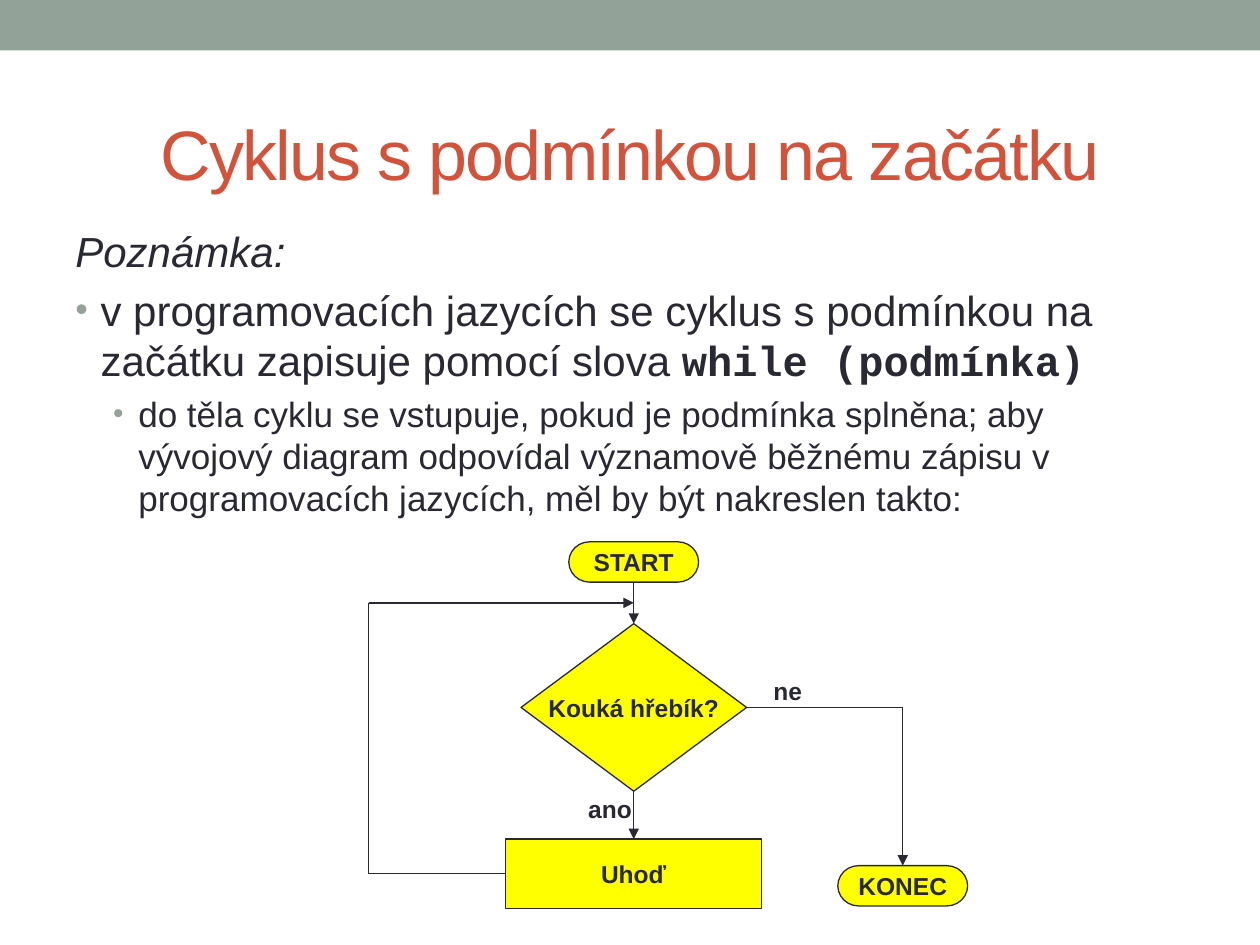
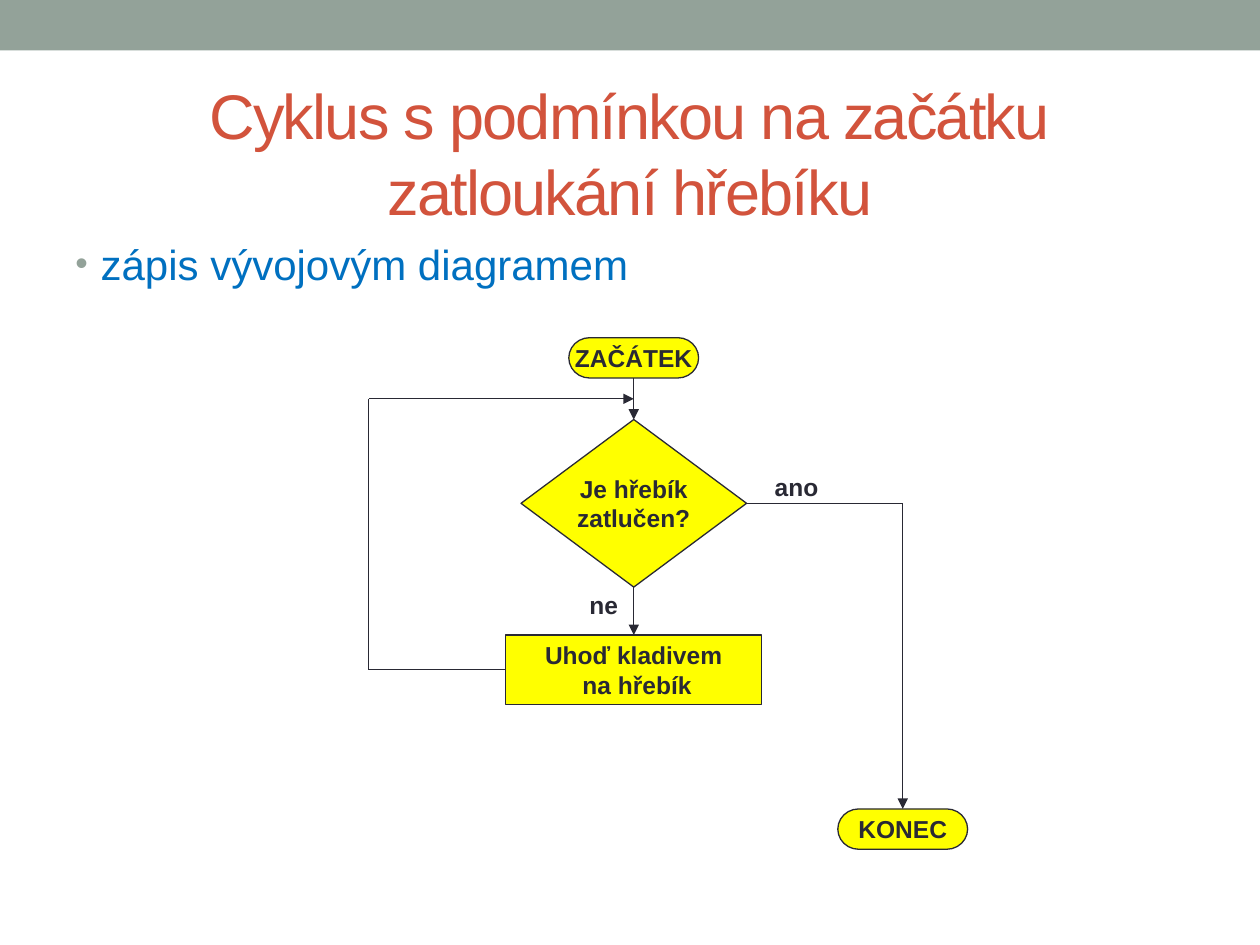
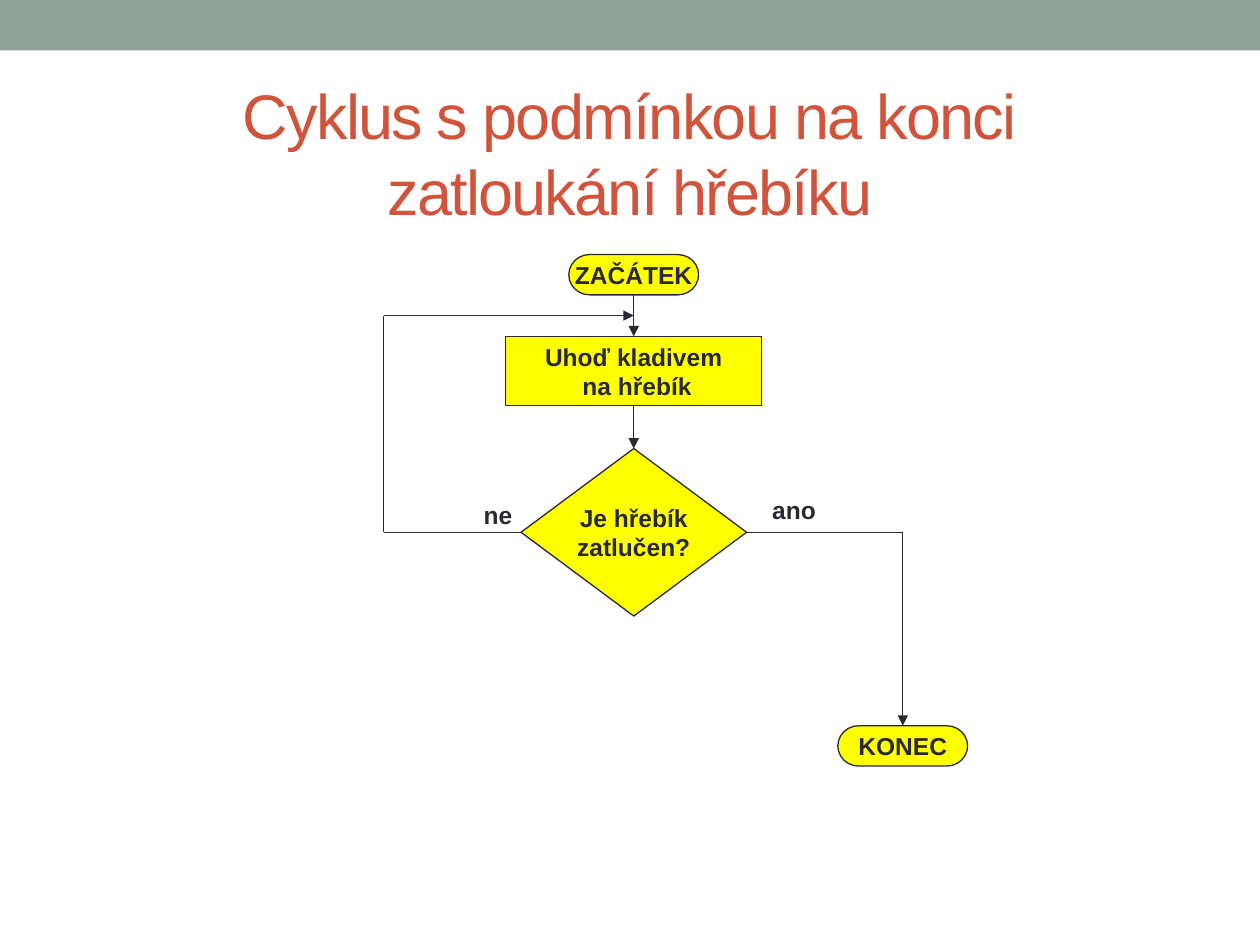
from dataclasses import dataclass

import pptx
import pptx.dml.color
import pptx.enum.shapes
import pptx.enum.text
import pptx.oxml
import pptx.oxml.ns
import pptx.util
from pptx.util import Inches

COLORS = {
    "band": "93A299",
    "title": "D2533C",
    "text": "292934",
    "highlight": "0070C0",
    "node": "FFFF00",
}
FONT = "Arial"
CODE_FONT = "Courier New"
NODE_TEXT_SIZE = 14

AXIS_X = 5.03
END_X = 7.165
FIRST_GAP = 0.33
LOOP_OFFSET = 1.09

SHAPES = pptx.enum.shapes.MSO_SHAPE
TOP, LEFT, BOTTOM, RIGHT = range(4)


@dataclass(frozen=True)
class NodeKind:
    preset: pptx.enum.shapes.MSO_SHAPE
    width: float
    height: float


DECISION = NodeKind(SHAPES.FLOWCHART_DECISION, 1.79, 1.33)
PROCESS = NodeKind(SHAPES.FLOWCHART_PROCESS, 2.03, 0.55)
TERMINATOR = NodeKind(SHAPES.FLOWCHART_TERMINATOR, 1.03, 0.32)


@dataclass(frozen=True)
class Step:
    kind: NodeKind
    text: str
    gap: float = FIRST_GAP


@dataclass(frozen=True)
class Answer:
    text: str
    left: float
    top: float
    width: float


@dataclass(frozen=True)
class Flow:
    start_text: str
    start_top: float
    end_top: float
    steps: tuple[Step, ...]
    answers: tuple[Answer, ...]


@dataclass(frozen=True)
class BodyParagraph:
    text: str
    size: int = 24
    color: str = "text"
    code: str = ""
    italic: bool = False
    bullet: bool = True
    level: int = 0


@dataclass(frozen=True)
class SlideContent:
    title: str
    title_size: int
    flow: Flow
    body_top: float = 0
    body: tuple[BodyParagraph, ...] = ()


HAMMER_TEXT = "Uhoď kladivem\n na hřebík"
QUESTION_TEXT = "Je hřebík\nzatlučen?"

SLIDES = (
    SlideContent(
        "Cyklus s podmínkou na začátku", 40,
        Flow("START", 4.3, 6.87,
             (Step(DECISION, "Kouká hřebík?"), Step(PROCESS, "Uhoď", 0.38)),
             (Answer("ano", 4.57, 6.25, 0.55), Answer("ne", 6.04, 5.32, 0.43))),
        1.74,
        (BodyParagraph("Poznámka:", italic=True, bullet=False),
         BodyParagraph("v programovacích jazycích se cyklus s podmínkou na "
                       "začátku zapisuje pomocí slova ", code="while (podmínka)"),
         BodyParagraph("do těla cyklu se vstupuje, pokud je podmínka splněna; aby "
                       "vývojový diagram odpovídal významově běžnému zápisu v "
                       "programovacích jazycích, měl by být nakreslen takto:",
                       size=20, level=1)),
    ),
    SlideContent(
        "Cyklus s podmínkou na začátku\vzatloukání hřebíku", 36,
        Flow("ZAČÁTEK", 2.68, 6.42,
             (Step(DECISION, QUESTION_TEXT), Step(PROCESS, HAMMER_TEXT, 0.38)),
             (Answer("ne", 4.58, 4.63, 0.43), Answer("ano", 6.05, 3.7, 0.55))),
        1.84,
        (BodyParagraph("zápis vývojovým diagramem", color="highlight"),),
    ),
    SlideContent(
        "Cyklus s podmínkou na konci\vzatloukání hřebíku", 36,
        Flow("ZAČÁTEK", 2.02, 5.76,
             (Step(PROCESS, HAMMER_TEXT), Step(DECISION, QUESTION_TEXT, 0.34)),
             (Answer("ne", 3.74, 3.92, 0.43), Answer("ano", 6.03, 3.88, 0.55))),
    ),
)


def rgb(name: str) -> pptx.dml.color.RGBColor:
    return pptx.dml.color.RGBColor.from_string(COLORS[name])


def append_xml(parent, tag: str, attributes: str = "") -> None:
    namespace = pptx.oxml.ns.nsdecls("a")
    parent.append(pptx.oxml.parse_xml(f"<a:{tag} {namespace} {attributes}/>"))


def format_font(font, size: int, color: str, bold: bool = False,
                italic: bool = False, name: str = FONT) -> None:
    font.name = name
    font.size = pptx.util.Pt(size)
    font.bold = bold
    font.italic = italic
    font.color.rgb = rgb(color)


def format_node_text(text_frame) -> None:
    text_frame.word_wrap = False
    for paragraph in text_frame.paragraphs:
        for run in paragraph.runs:
            format_font(run.font, NODE_TEXT_SIZE, "text", bold=True)


def add_band(slide) -> None:
    band = slide.shapes.add_shape(SHAPES.RECTANGLE, 0, 0, Inches(10), Inches(0.4))
    band.shadow.inherit = False
    band.fill.solid()
    band.fill.fore_color.rgb = rgb("band")
    band.line.fill.background()


def add_title(slide, text: str, size: int) -> None:
    title = slide.shapes.add_textbox(Inches(0.5), Inches(0.58), Inches(9), Inches(1.26))
    title.text_frame.word_wrap = True
    title.text_frame.vertical_anchor = pptx.enum.text.MSO_ANCHOR.MIDDLE
    title.text_frame.text = text
    paragraph = title.text_frame.paragraphs[0]
    paragraph.alignment = pptx.enum.text.PP_ALIGN.CENTER
    for run in paragraph.runs:
        format_font(run.font, size, "title")
        run._r.get_or_add_rPr().set("spc", "-100")


def add_bullet(paragraph, level: int) -> None:
    properties = paragraph._p.get_or_add_pPr()
    properties.set("marL", str(Inches(0.2 + 0.3 * level)))
    properties.set("indent", str(Inches(-0.2)))
    append_xml(properties, "buClr")
    append_xml(properties[-1], "srgbClr", f'val="{COLORS["band"]}"')
    append_xml(properties, "buSzPct", 'val="85000"')
    append_xml(properties, "buFont", f'typeface="{FONT}"')
    append_xml(properties, "buChar", 'char="•"')


def add_body(slide, top: float, body: tuple[BodyParagraph, ...]) -> None:
    box = slide.shapes.add_textbox(Inches(0.5), Inches(top), Inches(9), Inches(7.08 - top))
    text_frame = box.text_frame
    text_frame.word_wrap = True
    text_frame.text = "\n".join(item.text for item in body)
    for paragraph, item in zip(text_frame.paragraphs, body):
        paragraph.level = item.level
        paragraph.space_before = pptx.util.Pt(0.2 * item.size)
        format_font(paragraph.runs[0].font, item.size, item.color, italic=item.italic)
        if item.code:
            code_run = paragraph.add_run()
            code_run.text = item.code
            format_font(code_run.font, item.size, item.color, bold=True, name=CODE_FONT)
        if item.bullet:
            add_bullet(paragraph, item.level)


def add_node(slide, kind: NodeKind, text: str, center_x: float, top: float):
    node = slide.shapes.add_shape(kind.preset, Inches(center_x - kind.width / 2),
                                  Inches(top), Inches(kind.width), Inches(kind.height))
    node.shadow.inherit = False
    node.fill.solid()
    node.fill.fore_color.rgb = rgb("node")
    node.line.color.rgb = rgb("text")
    node.line.width = pptx.util.Pt(0.75)
    node.text_frame.text = text
    node.text_frame.vertical_anchor = pptx.enum.text.MSO_ANCHOR.MIDDLE
    for paragraph in node.text_frame.paragraphs:
        paragraph.alignment = pptx.enum.text.PP_ALIGN.CENTER
    format_node_text(node.text_frame)
    return node


def add_answer(slide, answer: Answer) -> None:
    label = slide.shapes.add_textbox(Inches(answer.left), Inches(answer.top),
                                     Inches(answer.width), Inches(0.34))
    label.text_frame.text = answer.text
    label.text_frame.auto_size = pptx.enum.text.MSO_AUTO_SIZE.SHAPE_TO_FIT_TEXT
    format_node_text(label.text_frame)


def add_line(slide, start: tuple[int, int], end: tuple[int, int], arrow: bool = False):
    line = slide.shapes.add_connector(pptx.enum.shapes.MSO_CONNECTOR.STRAIGHT, *start, *end)
    line.line.color.rgb = rgb("text")
    line.line.width = pptx.util.Pt(0.75)
    if arrow:
        append_xml(line.line._get_or_add_ln(), "tailEnd", 'type="triangle"')
    append_xml(line._element.spPr, "effectLst")
    return line


def middle_y(shape) -> int:
    return shape.top + shape.height // 2


def add_flow(slide, flow: Flow) -> None:
    """Draw the chain of steps, the way out of the decision and the loop back."""
    start = add_node(slide, TERMINATOR, flow.start_text, AXIS_X, flow.start_top)
    end = add_node(slide, TERMINATOR, "KONEC", END_X, flow.end_top)
    axis_x, end_x = Inches(AXIS_X), Inches(END_X)

    chain = [start]
    bottom = flow.start_top + TERMINATOR.height
    for step in flow.steps:
        top = bottom + step.gap
        node = add_node(slide, step.kind, step.text, AXIS_X, top)
        previous = chain[-1]
        arrow = add_line(slide, (axis_x, previous.top + previous.height),
                         (axis_x, node.top), arrow=True)
        arrow.begin_connect(previous, BOTTOM)
        arrow.end_connect(node, TOP)
        chain.append(node)
        bottom = top + step.kind.height
        if step.kind is DECISION:
            exit_corner = (end_x, middle_y(node))
            exit_line = add_line(slide, (node.left + node.width, middle_y(node)), exit_corner)
            exit_line.begin_connect(node, RIGHT)
            exit_arrow = add_line(slide, exit_corner, (end_x, end.top), arrow=True)
            exit_arrow.end_connect(end, TOP)

    last = chain[-1]
    loop_x = last.left - Inches(LOOP_OFFSET)
    join_y = Inches(flow.start_top + TERMINATOR.height + FIRST_GAP / 2)
    lower_corner, upper_corner = (loop_x, middle_y(last)), (loop_x, join_y)
    loop_line = add_line(slide, (last.left, middle_y(last)), lower_corner)
    loop_line.begin_connect(last, LEFT)
    add_line(slide, lower_corner, upper_corner)
    add_line(slide, upper_corner, (axis_x, join_y), arrow=True)

    for answer in flow.answers:
        add_answer(slide, answer)


def main() -> None:
    presentation = pptx.Presentation()
    presentation.slide_width = Inches(10)
    presentation.slide_height = Inches(7.5)
    for content in SLIDES:
        slide = presentation.slides.add_slide(presentation.slide_layouts[6])
        add_band(slide)
        add_title(slide, content.title, content.title_size)
        if content.body:
            add_body(slide, content.body_top, content.body)
        add_flow(slide, content.flow)
    presentation.save("out.pptx")


if __name__ == "__main__":
    main()
